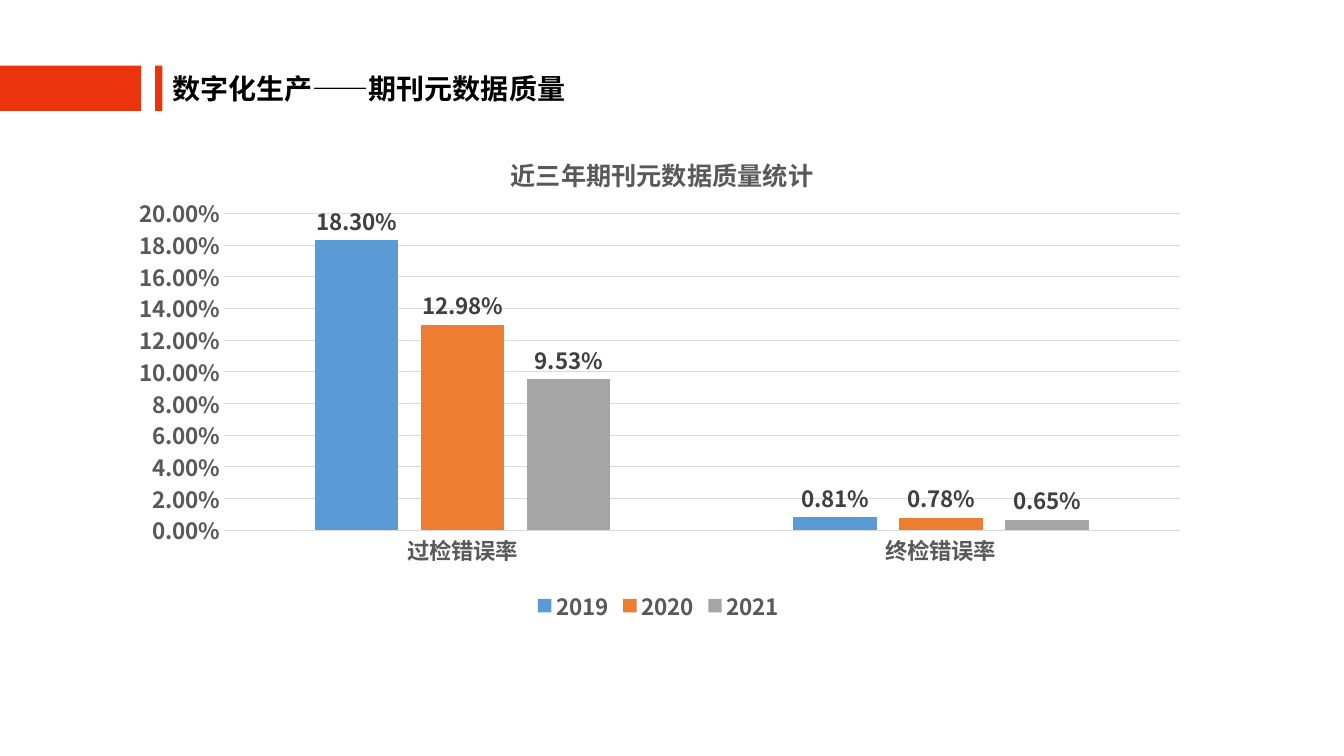
import pptx
import pptx.chart.data
import pptx.dml.color
import pptx.enum.chart
import pptx.enum.shapes
import pptx.enum.text
import pptx.oxml
import pptx.oxml.ns
import pptx.util
from dataclasses import dataclass

Inches = pptx.util.Inches
qn = pptx.oxml.ns.qn


@dataclass(frozen=True)
class Theme:
    font: str = "Noto Sans CJK SC"
    red: str = "EB340D"
    black: str = "000000"
    gray: str = "595959"
    label: str = "404040"
    grid: str = "D9D9D9"
    series: tuple = ("5B9BD5", "ED7D31", "A5A5A5")
    title_size: int = 20
    chart_title_size: int = 18
    chart_size: int = 16


theme = Theme()


def style_font(font, size, color):
    font.name = theme.font
    font.size = pptx.util.Pt(size)
    font.bold = True
    font.color.rgb = pptx.dml.color.RGBColor.from_string(color)


def place(element, index, **fractions):
    """Give a chart part a manual layout in fractions of the chart."""
    for layout in element.findall(qn("c:layout")):
        element.remove(layout)
    target = '<c:layoutTarget val="inner"/>' if "w" in fractions else ""
    modes = "".join(f'<c:{key}Mode val="edge"/>' for key in ("x", "y"))
    values = "".join(f'<c:{key} val="{value}"/>' for key, value in fractions.items())
    element.insert(index, pptx.oxml.parse_xml(
        f'<c:layout {pptx.oxml.ns.nsdecls("c")}><c:manualLayout>'
        f"{target}{modes}{values}</c:manualLayout></c:layout>"))


presentation = pptx.Presentation()
presentation.slide_width = Inches(13.33)
presentation.slide_height = Inches(7.5)
slide = presentation.slides.add_slide(presentation.slide_layouts[5])

# Red header bars
for left, width in ((0, 1.4), (1.54, 0.07)):
    bar = slide.shapes.add_shape(
        pptx.enum.shapes.MSO_SHAPE.RECTANGLE,
        Inches(left), Inches(0.65), Inches(width), Inches(0.45))
    bar.shadow.inherit = False
    bar.fill.solid()
    bar.fill.fore_color.rgb = pptx.dml.color.RGBColor.from_string(theme.red)
    bar.line.fill.background()

# Slide title
title = slide.shapes.title
title.left, title.top = Inches(1.61), Inches(0.66)
title.width, title.height = Inches(5.05), Inches(0.77)
title.text_frame.text = "数字化生产——期刊元数据质量"
title.text_frame.word_wrap = True
title.text_frame.auto_size = pptx.enum.text.MSO_AUTO_SIZE.NONE
title.text_frame.vertical_anchor = pptx.enum.text.MSO_ANCHOR.TOP
paragraph = title.text_frame.paragraphs[0]
paragraph.alignment = pptx.enum.text.PP_ALIGN.LEFT
style_font(paragraph.font, theme.title_size, theme.black)

# Error rate chart
error_rates = pptx.chart.data.CategoryChartData(number_format="0.00%")
error_rates.categories = ["过检错误率", "终检错误率"]
error_rates.add_series("2019", (0.183, 0.0081))
error_rates.add_series("2020", (0.1298, 0.0078))
error_rates.add_series("2021", (0.0953, 0.0065))
chart = slide.shapes.add_chart(
    pptx.enum.chart.XL_CHART_TYPE.COLUMN_CLUSTERED,
    Inches(1.14), Inches(1.22), Inches(10.78), Inches(4.99), error_rates).chart
style_font(chart.font, theme.chart_size, theme.gray)

# Chart title and legend
chart.has_title = True
chart_title = chart.chart_title
chart_title.include_in_layout = False
chart_title.text_frame.text = "近三年期刊元数据质量统计"
style_font(chart_title.text_frame.paragraphs[0].font, theme.chart_title_size, theme.gray)
chart.has_legend = True
chart.legend.position = pptx.enum.chart.XL_LEGEND_POSITION.BOTTOM
chart.legend.include_in_layout = False
style_font(chart.legend.font, theme.chart_size, theme.gray)

# Axes
grid_color = pptx.dml.color.RGBColor.from_string(theme.grid)
for axis in (chart.category_axis, chart.value_axis):
    axis.major_tick_mark = pptx.enum.chart.XL_TICK_MARK.NONE
    axis.minor_tick_mark = pptx.enum.chart.XL_TICK_MARK.NONE
    style_font(axis.tick_labels.font, theme.chart_size, theme.gray)
value_axis = chart.value_axis
value_axis.minimum_scale, value_axis.maximum_scale = 0, 0.2
value_axis.major_unit = 0.02
value_axis.tick_labels.number_format = "0.00%"
value_axis.tick_labels.number_format_is_linked = False
value_axis.format.line.fill.background()
for line in (chart.category_axis.format.line, value_axis.major_gridlines.format.line):
    line.color.rgb = grid_color
    line.width = pptx.util.Pt(0.75)

# Columns and their labels
plot = chart.plots[0]
plot.gap_width = 219
plot.overlap = -27
plot.vary_by_categories = False
for series, color in zip(plot.series, theme.series):
    series.format.fill.solid()
    series.format.fill.fore_color.rgb = pptx.dml.color.RGBColor.from_string(color)
    labels = series.data_labels
    labels.show_value = True
    labels.number_format = "0.00%"
    labels.number_format_is_linked = False
    labels.position = pptx.enum.chart.XL_LABEL_POSITION.OUTSIDE_END
    style_font(labels.font, theme.chart_size, theme.label)

# Positions inside the chart
chart_space = chart.element
place(chart_space.find(".//" + qn("c:title")), 1, x=0.36, y=0.05)
place(chart_space.find(".//" + qn("c:plotArea")), 0, x=0.1, y=0.18, w=0.88, h=0.63)

# East Asian typeface for the Chinese text
for root in (slide.element, chart_space):
    for latin in list(root.iter(qn("a:latin"))):
        latin.addnext(pptx.oxml.parse_xml(
            f'<a:ea {pptx.oxml.ns.nsdecls("a")} typeface="{theme.font}"/>'))

presentation.save("out.pptx")
